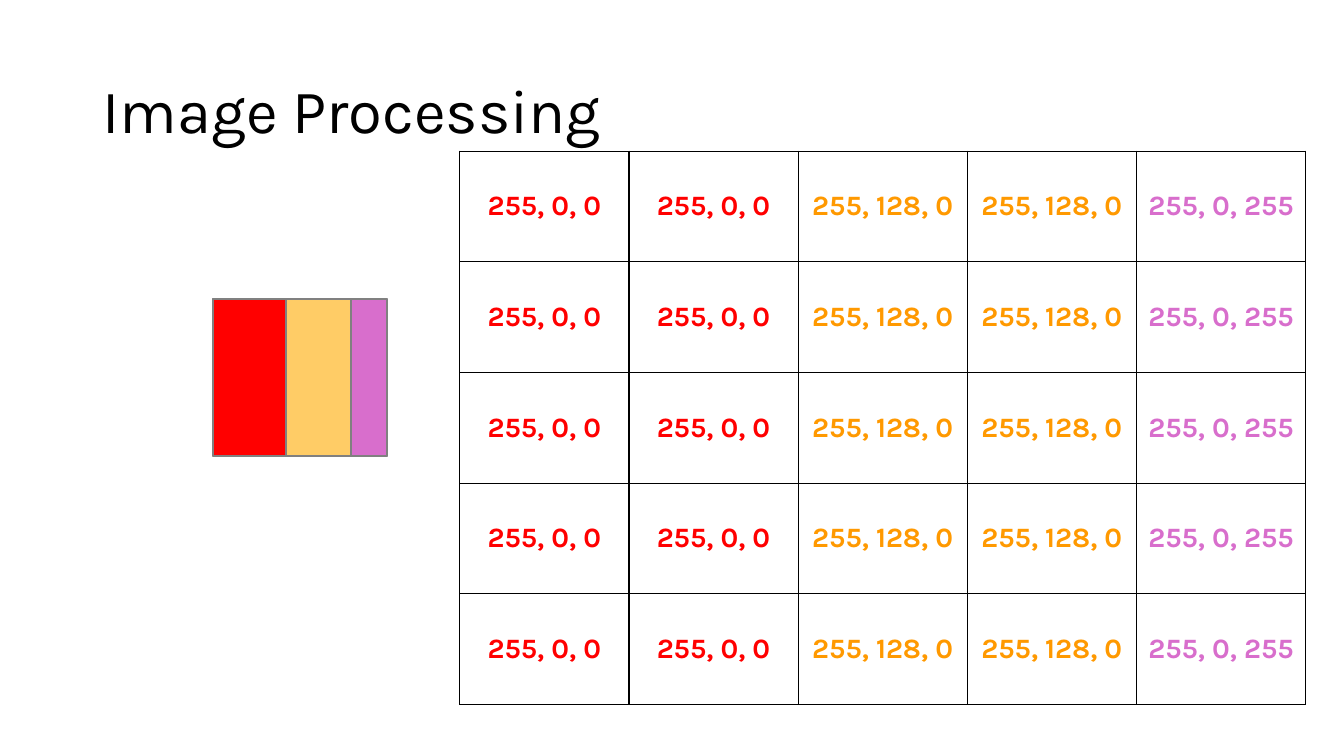
from lxml.etree import SubElement
from pptx import Presentation
from pptx.dml.color import RGBColor
from pptx.enum.shapes import MSO_SHAPE as Shape
from pptx.enum.text import MSO_ANCHOR as Anchor, PP_ALIGN as Align
from pptx.oxml.ns import qn
from pptx.util import Inches, Pt

FONT = "Karla"
RED, ORANGE, AMBER, PINK = "FF0000", "FF9900", "FFCC66", "D86ECC"
BLACK, GRAY = "000000", "808080"
PIXEL_ROW = [("255, 0, 0", RED)] * 2 + [("255, 128, 0", ORANGE)] * 2 + [("255, 0, 255", PINK)]
ROW_COUNT = 5


def color(value):
    """Turn a hex string into a colour."""
    return RGBColor.from_string(value)


def style_font(font, size, value, bold=False):
    """Set the typeface, size, colour and weight of a font."""
    font.name, font.size, font.bold = FONT, Pt(size), bold
    font.color.rgb = color(value)


def add_title(slide, text, left, top, width, height):
    """Place the slide title in its box."""
    box = slide.shapes.add_textbox(Inches(left), Inches(top), Inches(width), Inches(height))
    frame = box.text_frame
    frame.word_wrap = True
    frame.vertical_anchor = Anchor.MIDDLE
    para = frame.paragraphs[0]
    para.text = text
    para.line_spacing = 0.9
    style_font(para.font, 44, BLACK)


def add_borders(cell, value, points):
    """Draw all four borders of a table cell."""
    properties = cell._tc.get_or_add_tcPr()
    for index, side in enumerate(("a:lnL", "a:lnR", "a:lnT", "a:lnB")):
        line = SubElement(properties, qn(side), w=str(Pt(points)))
        SubElement(SubElement(line, qn("a:solidFill")), qn("a:srgbClr"), val=value)
        properties.insert(index, line)


def add_pixel_table(slide, left, top, width, height):
    """Place the grid of RGB pixel values in its box."""
    frame = slide.shapes.add_table(ROW_COUNT, len(PIXEL_ROW), Inches(left), Inches(top),
                                   Inches(width), Inches(height))
    table = frame.table
    table.first_row = table.horz_banding = False
    for row in table.rows:
        for cell, (text, value) in zip(row.cells, PIXEL_ROW):
            cell.fill.background()
            add_borders(cell, BLACK, 1)
            cell.vertical_anchor = Anchor.MIDDLE
            para = cell.text_frame.paragraphs[0]
            para.text = text
            para.alignment = Align.CENTER
            style_font(para.font, 20, value, bold=True)


def add_striped_image(slide, left, top, width, height):
    """Place the three-coloured image as a group of rectangles in its box."""
    group = slide.shapes.add_group_shape()
    red_width, pink_width = 0.73, 0.36
    stripes = [(0, width, AMBER), (0, red_width, RED), (width - pink_width, pink_width, PINK)]
    for offset, stripe_width, value in stripes:
        stripe = group.shapes.add_shape(Shape.RECTANGLE, Inches(left + offset), Inches(top),
                                        Inches(stripe_width), Inches(height))
        stripe.shadow.inherit = False
        stripe.fill.solid()
        stripe.fill.fore_color.rgb = color(value)
        stripe.line.color.rgb = color(GRAY)
        stripe.line.width = Pt(1.5)


def main():
    """Build the slide and save the deck."""
    deck = Presentation()
    deck.slide_width, deck.slide_height = Inches(13.33), Inches(7.5)
    page = deck.slides.add_slide(deck.slide_layouts[6])
    add_title(page, "Image Processing", 0.92, 0.4, 11.5, 1.45)
    add_pixel_table(page, 4.56, 1.5, 8.39, 5.49)
    add_striped_image(page, 2.11, 2.97, 1.73, 1.55)
    deck.save("out.pptx")


if __name__ == "__main__":
    main()
